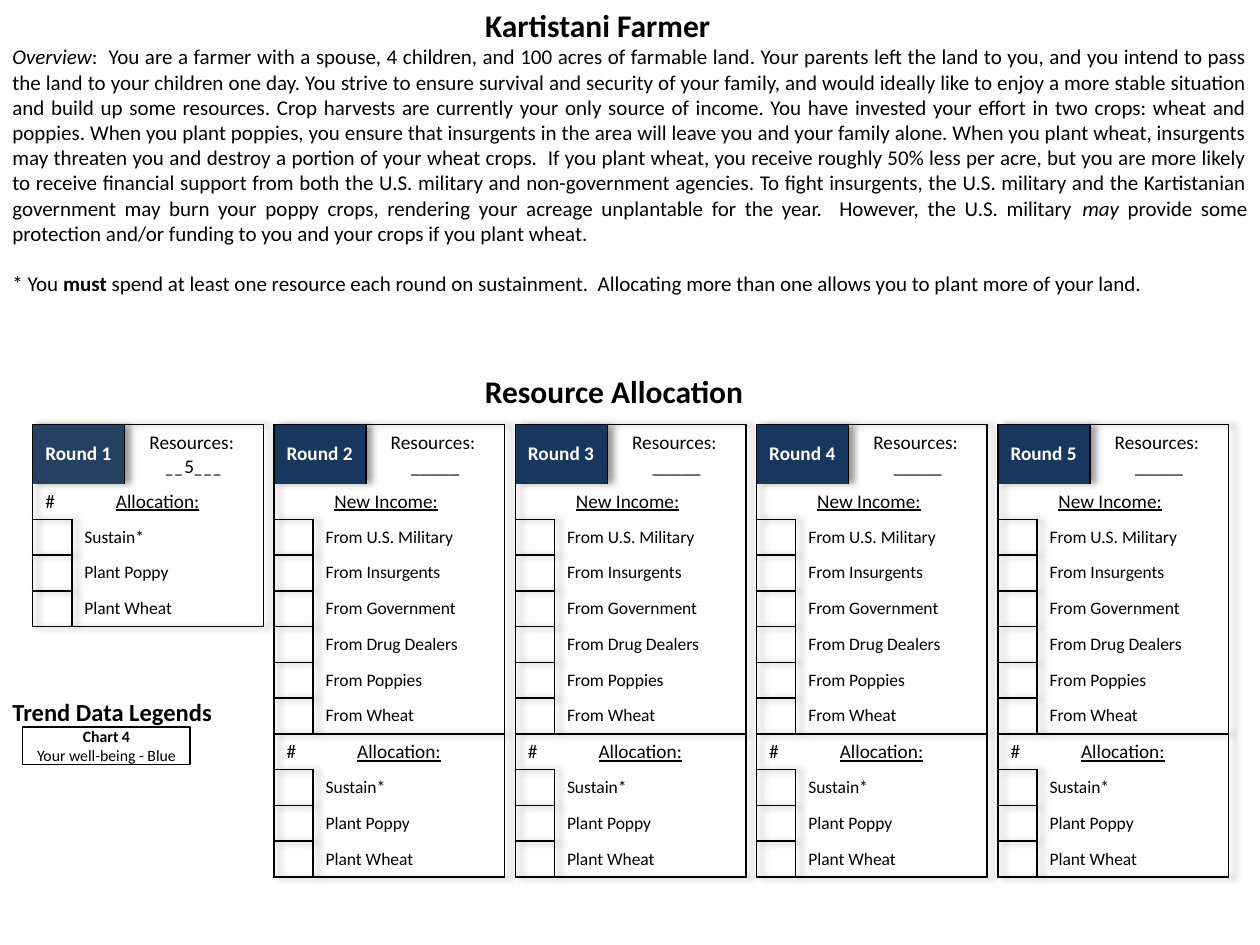
from lxml import etree
from pptx import Presentation
from pptx.dml.color import RGBColor
from pptx.enum import shapes, text
from pptx.oxml import parse_xml
from pptx.oxml.ns import nsdecls, qn
from pptx.util import Inches, Pt

FONT = "Calibri"
BLACK, WHITE, NAVY, SLATE = "000000", "FFFFFF", "17375E", "254061"
NO_STYLE = "{2D5ABB26-0587-4C30-8999-92F81FD0307C}"
COLUMNS = (0.31, 0.42, 1.1)
HEADER_HEIGHT, ROW_HEIGHT = 0.46, 0.284
TABLE_LEFT, TABLE_TOP, TABLE_STEP = 0.26, 3.37, 1.915
INCOME = ("From U.S. Military", "From Insurgents", "From Government",
          "From Drug Dealers", "From Poppies", "From Wheat")
ALLOCATION = ("Sustain*", "Plant Poppy", "Plant Wheat")
OVERVIEW = (
    ":  You are a farmer with a spouse, 4 children, and 100 acres of farmable land.",
    "Your parents left the land to you, and you intend to pass the land to your children "
    "one day.",
    "You strive to ensure survival and security of your family, and would ideally like to "
    "enjoy a more stable situation and build up some resources.",
    "Crop harvests are currently your only source of income.",
    "You have invested your effort in two crops: wheat and poppies.",
    "When you plant poppies, you ensure that insurgents in the area will leave you and your "
    "family alone.",
    "When you plant wheat, insurgents may threaten you and destroy a portion of your wheat "
    "crops. ",
    "If you plant wheat, you receive roughly 50% less per acre, but you are more likely to "
    "receive financial support from both the U.S. military and non-government agencies.",
    "To fight insurgents, the U.S. military and the Kartistanian government may burn your "
    "poppy crops, rendering your acreage unplantable for the year. ",
    "However, the U.S. military ",
)


def color(value):
    return RGBColor.from_string(value)


def write(paragraph, *parts, size, bold=False, fill=BLACK, align=None):
    """Fill a paragraph with strings or (string, font attribute) pairs."""
    font = paragraph.font
    font.name, font.size, font.bold = FONT, Pt(size), bold
    font.color.rgb = color(fill)
    paragraph.alignment = align
    for part in parts:
        if part == "\n":
            paragraph.add_line_break()
            continue
        words, emphasis = (part, None) if isinstance(part, str) else part
        run = paragraph.add_run()
        run.text = words
        if emphasis:
            setattr(run.font, emphasis, True)


def add_text(slide, left, top, width, height, wrap=True):
    box = slide.shapes.add_textbox(Inches(left), Inches(top), Inches(width), Inches(height))
    box.text_frame.word_wrap = wrap
    return box.text_frame


def add_title(slide, words):
    title = slide.shapes.title
    title.left, title.top = Inches(3.75), Inches(0)
    title.width, title.height = Inches(2.27), Inches(0.4)
    frame = title.text_frame
    frame.auto_size = text.MSO_AUTO_SIZE.NONE
    frame.vertical_anchor = text.MSO_ANCHOR.TOP
    write(frame.paragraphs[0], words, size=18, bold=True, align=text.PP_ALIGN.LEFT)


def add_overview(slide):
    frame = add_text(slide, 0, 0.3, 10, 2.12)
    justify = text.PP_ALIGN.JUSTIFY
    write(frame.paragraphs[0], ("Overview", "italic"), " ".join(OVERVIEW), ("may", "italic"),
          " provide some protection and/or funding to you and your crops if you plant wheat.",
          size=12, align=justify)
    note = frame.add_paragraph()
    note.space_before = Pt(14.5)
    write(note, "* You ", ("must", "bold"),
          " spend at least one resource each round on sustainment.  "
          "Allocating more than one allows you to plant more of your land. ",
          size=12, align=justify)


def set_borders(cell, sides):
    """Draw 1 pt black lines on the sides named by the letters L, R, T and B."""
    properties = cell._tc.get_or_add_tcPr()
    for side in "LRTB":
        line = etree.SubElement(properties, qn(f"a:ln{side}"), w=str(Pt(1)))
        if side in sides:
            solid = etree.SubElement(line, qn("a:solidFill"))
            etree.SubElement(solid, qn("a:srgbClr"), val=BLACK)
        else:
            etree.SubElement(line, qn("a:noFill"))


def format_cells(cells, sides, fill=None):
    for cell in cells:
        set_borders(cell, sides)
        cell.vertical_anchor = text.MSO_ANCHOR.MIDDLE
        if fill:
            cell.fill.solid()
            cell.fill.fore_color.rgb = color(fill)
        else:
            cell.fill.background()


def set_indent(paragraph, indent):
    paragraph._p.get_or_add_pPr().set("marL", str(Inches(indent)))


def set_tab(paragraph, position):
    properties = paragraph._p.get_or_add_pPr()
    properties.insert(0, parse_xml(
        f'<a:tabLst {nsdecls("a")}><a:tab pos="{Inches(position)}" algn="l"/></a:tabLst>'))


def fill_header(cells, number, resources, fill):
    cells[0].merge(cells[1])
    format_cells(cells[:2], "LRT", fill)
    format_cells(cells[2:], "LRT")
    write(cells[0].text_frame.paragraphs[0], f"Round {number}", size=11, bold=True, fill=WHITE)
    write(cells[2].text_frame.paragraphs[0], "Resources: ", "\n", *resources,
          size=11, align=text.PP_ALIGN.CENTER)


def fill_heading(cells, words, numbered, sides):
    cells[0].merge(cells[2])
    format_cells(cells, sides)
    paragraph = cells[0].text_frame.paragraphs[0]
    if numbered:
        write(paragraph, "#\t", (words, "underline"), size=11)
        set_tab(paragraph, 0.56)
    else:
        write(paragraph, (words, "underline"), size=11)
        set_indent(paragraph, 0.38)


def fill_entry(cells, words, last):
    box, label = cells[0], cells[1]
    label.merge(cells[2])
    format_cells([box], "LRTB")
    format_cells(cells[1:], "LRB" if last else "LR")
    box.margin_top = box.margin_bottom = 0
    blank = box.text_frame.paragraphs[0]
    write(blank, size=10)
    blank._p.get_or_add_endParaRPr().set("sz", "1000")
    write(label.text_frame.paragraphs[0], words, size=10)


def add_shadow(table):
    table._tbl.tblPr.insert(0, parse_xml(
        f'<a:effectLst {nsdecls("a")}><a:outerShdw blurRad="50800" dist="38100" dir="0" '
        f'algn="l" rotWithShape="0"><a:srgbClr val="{BLACK}"><a:alpha val="40000"/>'
        '</a:srgbClr></a:outerShdw></a:effectLst>'))


def add_round(slide, number, sections, resources, fill):
    count = 1 + sum(1 + len(entries) for _, entries in sections)
    frame = slide.shapes.add_table(
        count, len(COLUMNS), Inches(TABLE_LEFT + (number - 1) * TABLE_STEP), Inches(TABLE_TOP),
        Inches(sum(COLUMNS)), Inches(HEADER_HEIGHT + (count - 1) * ROW_HEIGHT))
    table = frame.table
    table.first_row = table.horz_banding = False
    table._tbl.tblPr.find(qn("a:tableStyleId")).text = NO_STYLE
    add_shadow(table)
    for column, width in zip(table.columns, COLUMNS):
        column.width = Inches(width)
    for index, row in enumerate(table.rows):
        row.height = Inches(ROW_HEIGHT if index else HEADER_HEIGHT)
    rows = iter([list(row.cells) for row in table.rows])
    fill_header(next(rows), number, resources, fill)
    for index, (heading, entries) in enumerate(sections):
        fill_heading(next(rows), heading, heading == "Allocation:", "LRT" if index else "LR")
        for entry in entries:
            last = index == len(sections) - 1 and entry == entries[-1]
            fill_entry(next(rows), entry, last)


def add_legend(slide):
    box = slide.shapes.add_shape(shapes.MSO_SHAPE.RECTANGLE, Inches(0.18), Inches(5.77),
                                 Inches(1.33), Inches(0.3))
    box.shadow.inherit = False
    box.fill.background()
    box.line.color.rgb = color(BLACK)
    box.line.width = Pt(0.75)
    frame = box.text_frame
    frame.margin_left = frame.margin_right = frame.margin_top = frame.margin_bottom = 0
    center = text.PP_ALIGN.CENTER
    write(frame.paragraphs[0], "Chart 4", size=9, bold=True, align=center)
    write(frame.add_paragraph(), "Your well-being - Blue", size=9, align=center)


def main():
    presentation = Presentation()
    presentation.slide_width, presentation.slide_height = Inches(10), Inches(7.5)
    slide = presentation.slides.add_slide(presentation.slide_layouts[5])
    add_title(slide, "Kartistani Farmer")
    add_overview(slide)
    heading = add_text(slide, 3.75, 2.9, 2.27, 0.4, wrap=False)
    write(heading.paragraphs[0], "Resource Allocation", size=18, bold=True)
    allocation = ("Allocation:", ALLOCATION)
    add_round(slide, 1, [allocation], [("__", "italic"), "5", ("___", "italic")], SLATE)
    for number in range(2, 6):
        add_round(slide, number, [("New Income:", INCOME), allocation], ["_____"], NAVY)
    add_legend(slide)
    legends = add_text(slide, 0, 5.48, 1.79, 0.34, wrap=False)
    write(legends.paragraphs[0], "Trend Data Legends", size=14, bold=True)
    presentation.save("out.pptx")


if __name__ == "__main__":
    main()
